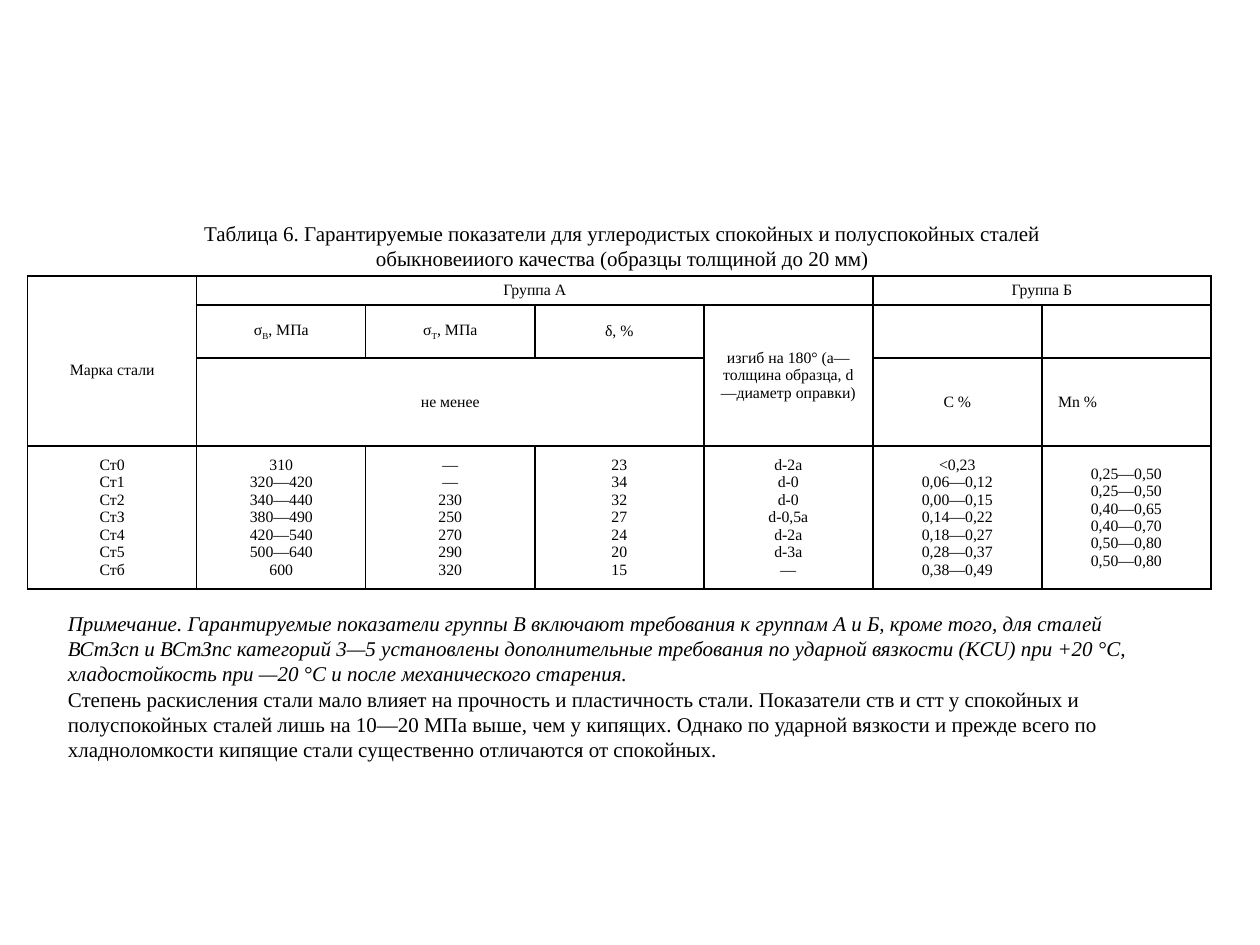
"""Build a slide with a table of guaranteed properties of carbon steels."""
from lxml import etree
from pptx import Presentation
from pptx.dml.color import RGBColor
from pptx.enum.text import MSO_ANCHOR, MSO_AUTO_SIZE, PP_ALIGN
from pptx.oxml.ns import qn
from pptx.util import Inches, Pt

CENTER, LEFT = PP_ALIGN.CENTER, PP_ALIGN.LEFT
MIDDLE = MSO_ANCHOR.MIDDLE
GROW = MSO_AUTO_SIZE.SHAPE_TO_FIT_TEXT
BLACK = RGBColor(0, 0, 0)

TITLE = ("Таблица 6. Гарантируемые показатели для углеродистых спокойных и "
         "полуспокойных сталей обыкновеииого качества (образцы толщиной до 20 мм)")
NOTE = ("Примечание. Гарантируемые показатели группы В включают требования к группам "
        "А и Б, кроме того, для сталей ВСтЗсп и ВСтЗпс категорий 3—5 установлены "
        "дополнительные требования по ударной вязкости (KCU) при +20 °С, "
        "хладостойкость при —20 °С и после механического старения.")
REMARK = ("Степень раскисления стали мало влияет на прочность и пластичность стали. "
          "Показатели ств и стт у спокойных и полуспокойных сталей лишь на 10—20 МПа "
          "выше, чем у кипящих. Однако по ударной вязкости и прежде всего по "
          "хладноломкости кипящие стали существенно отличаются от спокойных.")

ROW_HEIGHTS = [0.23, 0.42, 0.7, 1.12]
COLUMN_COUNT = 7
MERGES = [((0, 0), (2, 0)), ((0, 1), (0, 4)), ((0, 5), (0, 6)),
          ((1, 4), (2, 4)), ((2, 1), (2, 3))]
HEADERS = {
    (0, 0): "Марка стали", (0, 1): "Группа А", (0, 5): "Группа Б",
    (1, 1): "σ|В|, МПа", (1, 2): "σ|Т|, МПа", (1, 3): "δ, %",
    (1, 4): "изгиб на 180° (а—толщина образца, d—диаметр оправки)",
    (2, 1): "не менее", (2, 5): "С %", (2, 6): "Mn %",
}
STEELS = [
    ["Ст0", "Ст1", "Ст2", "СтЗ", "Ст4", "Ст5", "Стб"],
    ["310", "320—420", "340—440", "380—490", "420—540", "500—640", "600"],
    ["—", "—", "230", "250", "270", "290", "320"],
    ["23", "34", "32", "27", "24", "20", "15"],
    ["d-2a", "d-0", "d-0", "d-0,5а", "d-2a", "d-3a", "—"],
    ["<0,23", "0,06—0,12", "0,00—0,15", "0,14—0,22", "0,18—0,27", "0,28—0,37",
     "0,38—0,49"],
    ["0,25—0,50", "0,25—0,50", "0,40—0,65", "0,40—0,70", "0,50—0,80", "0,50—0,80"],
]


def add_span(para, text, font="Times New Roman", size=12, color=BLACK,
             italic=False, baseline=0):
    """Append formatted text to a paragraph."""
    span = para.add_run()
    span.text = text
    span.font.name = font
    span.font.size = Pt(size)
    span.font.color.rgb = color
    span.font.italic = italic
    if baseline:
        span.font._element.set("baseline", str(baseline * 1000))


class SlideWriter:
    """Hold the slide and its style."""

    body_size = 12
    cell_size = 9
    border_width = 1

    def __init__(self, page):
        """Keep the slide to write on."""
        self.page = page

    def text(self, left, top, width, height, lines, align=LEFT):
        """Add a text box from pairs of text and italic flag."""
        box = self.page.shapes.add_textbox(
            Inches(left), Inches(top), Inches(width), Inches(height))
        frame = box.text_frame
        frame.word_wrap = True
        frame.auto_size = GROW
        frame.vertical_anchor = MIDDLE
        for index, (line, italic) in enumerate(lines):
            para = frame.add_paragraph() if index else frame.paragraphs[0]
            para.alignment = align
            add_span(para, line, size=self.body_size, italic=italic)

    def table(self, left, top, width, row_heights, column_count):
        """Add a plain bordered table and return it."""
        frame = self.page.shapes.add_table(
            len(row_heights), column_count, Inches(left), Inches(top),
            Inches(width), Inches(sum(row_heights)))
        table = frame.table
        table.first_row = table.horz_banding = False
        for row, height in zip(table.rows, row_heights):
            row.height = Inches(height)
            for cell in row.cells:
                self.style_cell(cell)
        return table

    def style_cell(self, cell):
        """Set margins, fill, empty text size and borders of a cell."""
        cell.margin_left = cell.margin_right = Inches(0.13)
        cell.margin_top = cell.margin_bottom = Inches(0.04)
        cell.vertical_anchor = MIDDLE
        cell.fill.background()
        para = cell.text_frame.paragraphs[0]
        etree.SubElement(para._p, qn("a:endParaRPr"), sz=str(self.cell_size * 100))
        properties = cell._tc.get_or_add_tcPr()
        for index, side in enumerate("LRTB"):
            line = etree.Element(qn(f"a:ln{side}"), w=str(Pt(self.border_width)))
            fill = etree.SubElement(line, qn("a:solidFill"))
            etree.SubElement(fill, qn("a:srgbClr"), val=str(BLACK))
            properties.insert(index, line)

    def fill_cell(self, cell, lines, align=CENTER):
        """Write lines into a cell, with subscripts between bars."""
        frame = cell.text_frame
        for index, line in enumerate(lines):
            para = frame.add_paragraph() if index else frame.paragraphs[0]
            para.alignment = align
            for part, text in enumerate(line.split("|")):
                add_span(para, text, size=self.cell_size, baseline=-30 * (part % 2))


def main():
    """Build and save the deck."""
    deck = Presentation()
    deck.slide_width, deck.slide_height = Inches(10), Inches(7.5)
    writer = SlideWriter(deck.slides.add_slide(deck.slide_layouts[6]))

    writer.text(1.22, 1.7, 7.44, 0.5, [(TITLE, False)], CENTER)
    table = writer.table(0.22, 2.19, 9.39, ROW_HEIGHTS, COLUMN_COUNT)
    for first, last in MERGES:
        table.cell(*first).merge(table.cell(*last))
    for place, header in HEADERS.items():
        writer.fill_cell(table.cell(*place), [header],
                         LEFT if place == (2, 6) else CENTER)
    table.cell(0, 0).margin_top = Inches(0.18)
    for column, values in enumerate(STEELS):
        writer.fill_cell(table.cell(3, column), values)
    writer.text(0.44, 4.79, 8.78, 1.31, [(NOTE, True), (REMARK, False)])

    deck.save("out.pptx")


if __name__ == "__main__":
    main()
